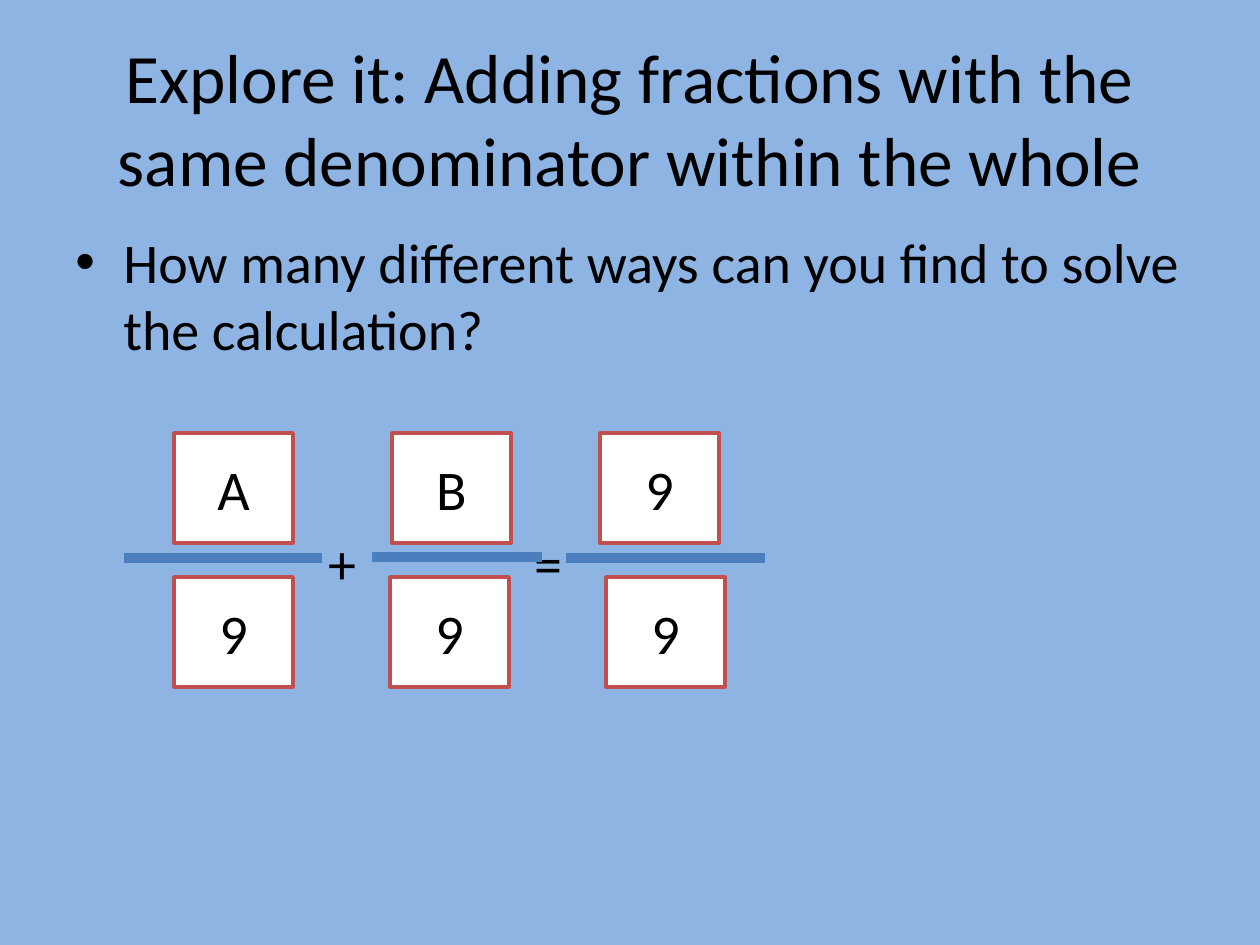
from lxml.etree import SubElement as Sub
from pptx import Presentation
from pptx.dml.color import RGBColor
from pptx.enum.shapes import MSO_CONNECTOR as Conn, MSO_SHAPE as Shape
from pptx.enum.text import MSO_ANCHOR as Anchor, PP_ALIGN as Align
from pptx.oxml.ns import qn
from pptx.util import Emu, Pt

SKY = RGBColor(0x8E, 0xB4, 0xE3)
BLACK = RGBColor(0, 0, 0)
WHITE = RGBColor(255, 255, 255)
RED = RGBColor(0xC0, 0x50, 0x4D)
BLUE = RGBColor(0x4B, 0x7E, 0xBC)
FONT = "Calibri"
SIZE = 32
TOP, LOW = 433, 577
WIDE, HIGH = 119, 110


def px(*nums):
    return [Emu(round(n * 914400 / 126)) for n in nums]


def write(shape, text, size=SIZE, align=Align.CENTER, anchor=Anchor.MIDDLE):
    frame = shape.text_frame
    frame.word_wrap = True
    frame.vertical_anchor = anchor
    frame.text = text
    para = frame.paragraphs[0]
    para.alignment = align
    font = para.runs[0].font
    font.name = FONT
    font.size = Pt(size)
    font.color.rgb = BLACK
    return para


def label(slide, text, area, **style):
    return write(slide.shapes.add_textbox(*px(*area)), text, **style)


def bullet(para):
    props = para._p.get_or_add_pPr()
    indent = px(48)[0]
    props.set("marL", str(indent))
    props.set("indent", str(-indent))
    Sub(props, qn("a:buFont")).set("typeface", "Arial")
    Sub(props, qn("a:buChar")).set("char", "•")


def box(slide, text, left, top):
    shape = slide.shapes.add_shape(Shape.RECTANGLE, *px(left, top, WIDE, HIGH))
    shape.shadow.inherit = False
    shape.fill.solid()
    shape.fill.fore_color.rgb = WHITE
    shape.line.color.rgb = RED
    shape.line.width = Pt(2)
    write(shape, text)


def bar(slide, start, end, y):
    line = slide.shapes.add_connector(Conn.STRAIGHT, *px(start, y, end, y))
    line.line.color.rgb = BLUE
    line.line.width = Pt(6)
    Sub(line._element.spPr, qn("a:effectLst"))


def main():
    deck = Presentation()
    deck.slide_width, deck.slide_height = px(1260, 945)
    slide = deck.slides.add_slide(deck.slide_layouts[6])
    fill = slide.background.fill
    fill.solid()
    fill.fore_color.rgb = SKY

    label(slide, "Explore it: Adding fractions with the same denominator "
          "within the whole", (63, 38, 1134, 158), size=39.6)
    bullet(label(slide, "How many different ways can you find to solve "
                 "the calculation?", (63, 221, 1134, 150),
                 align=Align.LEFT, anchor=Anchor.TOP))

    for sign, mid in (("+", 342), ("=", 548)):
        label(slide, sign, (mid - 40, 522, 80, 80))

    fractions = (
        ("A", 174, 174, 124, 322, 558),
        ("B", 392, 390, 372, 542, 557),
        ("9", 600, 606, 566, 765, 558),
    )
    for part, upper, lower, start, end, y in fractions:
        box(slide, part, upper, TOP)
        box(slide, "9", lower, LOW)
        bar(slide, start, end, y)
    deck.save("out.pptx")


if __name__ == "__main__":
    main()
